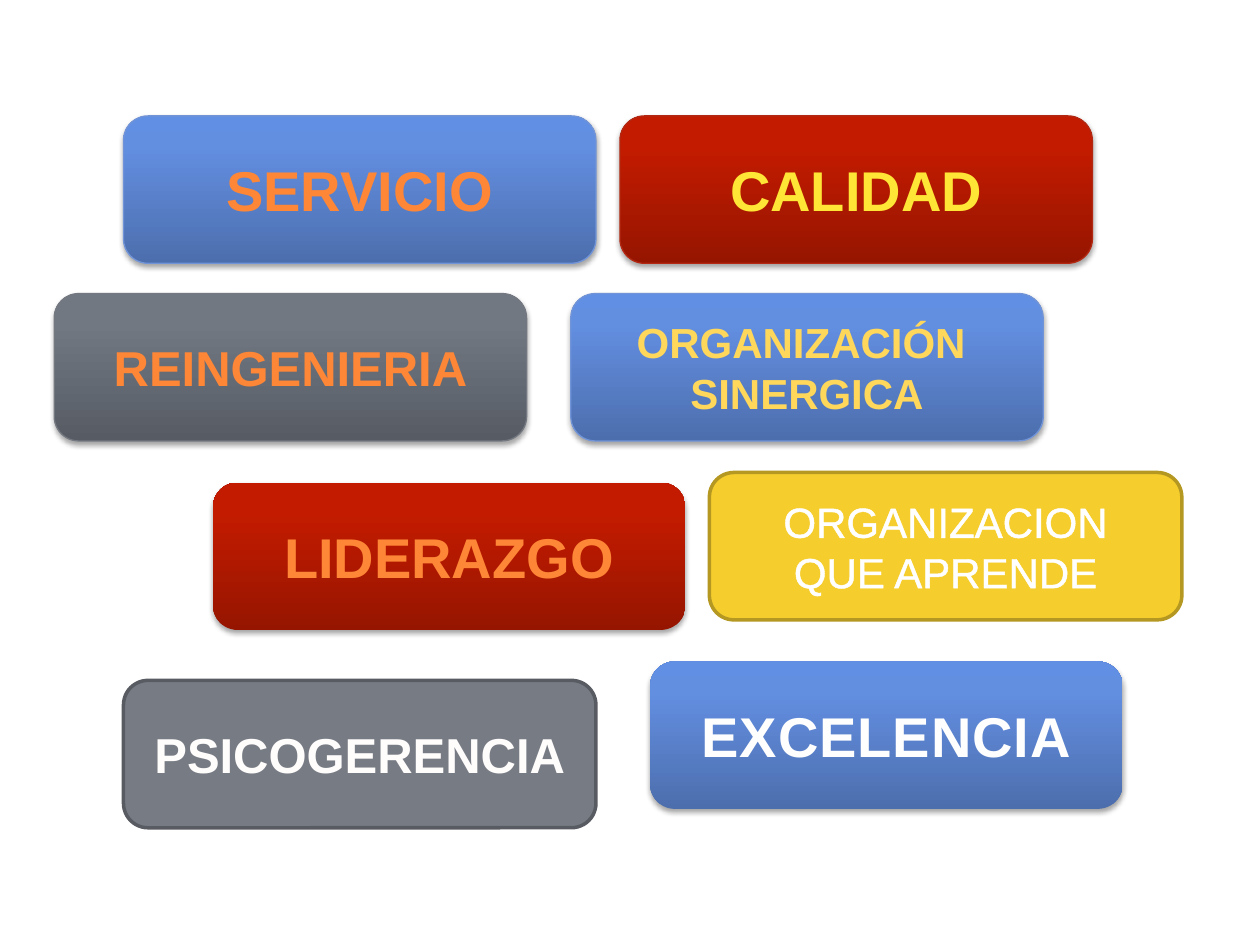
import copy

import pptx
import pptx.dml.color
import pptx.enum.shapes
import pptx.enum.text
import pptx.oxml
import pptx.oxml.ns
import pptx.util

Inches = pptx.util.Inches
Pt = pptx.util.Pt
WIDE, HIGH = 3.75, 1.17
BLUE = ["4C6EAD", "638FE1", "618FE4"]
RED = ["961500", "C31B00", "C41B00"]
GREY = ["575C64", "717882", "727883"]
ORANGE = "FE8637"

# left, top, fill, line, line width, lines of text, size, colour, bold, outline, spacing
CARDS = [
    (0.43, 2.33, GREY, "747981", 0.75, ["REINGENIERIA"], 28, ORANGE, True, None, 0),
    (0.98, 0.92, BLUE, "7094D7", 0.75, ["SERVICIO"], 32, ORANGE, True, None, 0),
    (0.98, 5.4, "777C84", "585C62", 2, ["PSICOGERENCIA"], 28, "FFFCFC", True,
     ("FF8636", 0.07), 0),
    (5.63, 3.75, "F5CD2D", "B59821", 2, ["ORGANIZACION", "QUE APRENDE"], 24, "FFFFFF",
     False, ("FFFFFF", 1.45), 0),
    (4.53, 2.33, BLUE, "7094D7", 0.75, ["ORGANIZACIÓN ", "SINERGICA"], 24, "FFD75B",
     True, None, 0),
    (1.69, 3.83, RED, None, 0, ["LIDERAZGO"], 32, ORANGE, True, None, 0),
    (5.16, 5.25, BLUE, None, 0, ["EXCELENCIA"], 32, "FEFEFE", True, ("6B7079", 1), 0.5),
    (4.92, 0.92, RED, "B32812", 0.75, ["CALIDAD"], 32, "FFE636", True, ("515D73", 1), 0),
]


def paint(color, value):
    """Set a colour from a hex string."""
    color.rgb = pptx.dml.color.RGBColor.from_string(value)


def node(text):
    """Parse one drawing element."""
    return pptx.oxml.parse_xml(text.replace(" ", f' {pptx.oxml.ns.nsdecls("a")} ', 1))


def shade(shape, colors):
    """Give a shape a three-stop upward gradient and a soft shadow."""
    shape.fill.gradient()
    shape.fill.gradient_angle = 90
    stops = shape._element.xpath(".//a:gsLst")[0]
    stops.append(copy.deepcopy(stops[0]))
    for stop, value, place in zip(shape.fill.gradient_stops, colors, (0, 0.8, 1)):
        paint(stop.color, value)
        stop.position = place
    shape._element.xpath("./p:spPr/a:effectLst")[0].append(node(
        f'<a:outerShdw blurRad="{Pt(3.1)}" dist="{Pt(1.8)}" dir="5400000" rotWithShape="0">'
        '<a:srgbClr val="000000"><a:alpha val="35000"/></a:srgbClr></a:outerShdw>'))


def label(frame, lines, size, color, bold, edge, space):
    """Write centred lines of text in a card."""
    frame.word_wrap = False
    frame.vertical_anchor = pptx.enum.text.MSO_ANCHOR.MIDDLE
    frame.text = "\n".join(lines)
    for para in frame.paragraphs:
        para.alignment = pptx.enum.text.PP_ALIGN.CENTER
        font = para.font
        font.name, font.size, font.bold = "Arial", Pt(size), bold
        paint(font.color, color)
        props = para._p.get_or_add_pPr().get_or_add_defRPr()
        if space:
            props.set("spc", str(int(space * 100)))
        if edge:
            props.insert(0, node(f'<a:ln w="{Pt(edge[1])}"><a:solidFill>'
                                 f'<a:srgbClr val="{edge[0]}"/></a:solidFill></a:ln>'))


def card(slide, left, top, fill, line, width, *words):
    """Draw one rounded card with its label."""
    shape = slide.shapes.add_shape(
        pptx.enum.shapes.MSO_SHAPE.ROUNDED_RECTANGLE,
        Inches(left), Inches(top), Inches(WIDE), Inches(HIGH))
    shape.shadow.inherit = False
    if isinstance(fill, list):
        shade(shape, fill)
    else:
        shape.fill.solid()
        paint(shape.fill.fore_color, fill)
    if line:
        paint(shape.line.color, line)
        shape.line.width = Pt(width)
    else:
        shape.line.fill.background()
    label(shape.text_frame, *words)


def main():
    """Build and save the slide."""
    deck = pptx.Presentation()
    deck.slide_width, deck.slide_height = Inches(10), Inches(7.5)
    slide = deck.slides.add_slide(deck.slide_layouts[6])
    for item in CARDS:
        card(slide, *item)
    deck.save("out.pptx")


if __name__ == "__main__":
    main()
